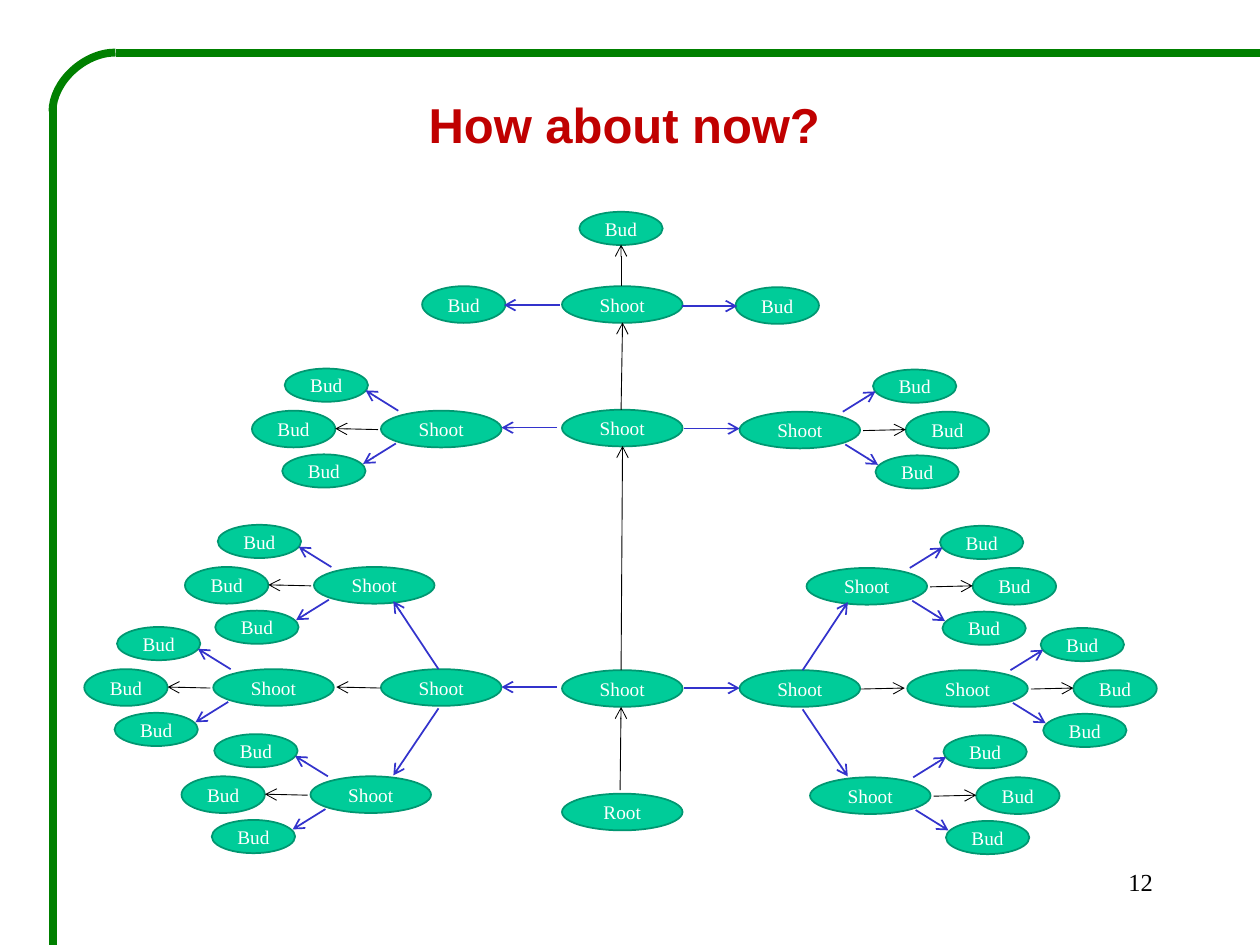
import pptx
import pptx.dml.color
import pptx.enum.shapes
import pptx.enum.text
import pptx.oxml
import pptx.oxml.ns
import pptx.util

Cm = pptx.util.Cm
Pt = pptx.util.Pt
Connector = pptx.enum.shapes.MSO_CONNECTOR
Align = pptx.enum.text.PP_ALIGN
Anchor = pptx.enum.text.MSO_ANCHOR

COLORS = {
    "title": "C00000",
    "node": "00CC99",
    "outline": "009771",
    "label": "FFFFFF",
    "stem": "000000",
    "branch": "3333CC",
    "frame": "008000",
}
ARROW_WIDTHS = {"stem": 0.5, "branch": 1}
MIRROR_SUM = 25.02
LEFT_RISE = 0.02
SHOOT = (2.43, 0.74)
BUD = (1.68, 0.74)
SMALL_BUD = (1.68, 0.67)
CENTER_LEFT = 11.33

CLUSTERS = [(14.91, 8.3), (16.26, 11.45), (18.29, 13.51), (16.33, 15.67)]
CLUSTER_BUDS = [(2.69, -0.85, SMALL_BUD), (3.35, 0, BUD), (2.74, 0.88, SMALL_BUD)]
CLUSTER_ARROWS = [
    ("branch", 2.08, 0, 2.74, -0.41),
    ("stem", 2.49, 0.38, 3.35, 0.36),
    ("branch", 2.13, 0.66, 2.79, 1.07),
]
SIDE_ARROWS = [
    ("branch", 13.74, 6.17, 14.86, 6.17),
    ("branch", 13.79, 8.64, 14.91, 8.64),
    ("branch", 13.79, 13.87, 14.91, 13.87),
    ("stem", 17.35, 13.89, 18.24, 13.87),
    ("branch", 16.18, 13.51, 17.09, 12.14),
    ("branch", 16.18, 14.3, 17.09, 15.65),
]
TRUNK_NODES = [("Shoot", 5.77), ("Shoot", 8.26), ("Shoot", 13.51), ("Root", 16)]
TRUNK_ARROWS = [
    (12.52, 5.77, 12.52, 4.93),
    (12.52, 8.26, 12.55, 6.5),
    (12.52, 13.51, 12.55, 8.99),
    (12.5, 15.93, 12.52, 14.25),
]


def color(name):
    return pptx.dml.color.RGBColor.from_string(COLORS[name])


def apply_format(target, values):
    for name, value in values.items():
        setattr(target, name, value)


def write_text(shape, text, frame_format, alignment, font_format, color_name):
    frame = shape.text_frame
    apply_format(frame, frame_format)
    paragraph = frame.paragraphs[0]
    paragraph.alignment = alignment
    run = paragraph.add_run()
    run.text = text
    apply_format(run.font, font_format)
    run.font.color.rgb = color(color_name)


def add_text(slide, box, *text_values):
    shape = slide.shapes.add_textbox(*map(Cm, box))
    write_text(shape, *text_values)


def add_node(slide, text, left, top, size):
    ellipse = pptx.enum.shapes.MSO_SHAPE.OVAL
    shape = slide.shapes.add_shape(ellipse, *map(Cm, (left, top, *size)))
    shape.shadow.inherit = False
    shape.fill.solid()
    shape.fill.fore_color.rgb = color("node")
    shape.line.color.rgb = color("outline")
    shape.line.width = Pt(1)
    margins = dict.fromkeys(
        ("margin_left", "margin_top", "margin_right", "margin_bottom"), 0)
    write_text(shape, text,
               {**margins, "word_wrap": False, "vertical_anchor": Anchor.MIDDLE},
               Align.CENTER, {"name": "Times New Roman", "size": Pt(11)}, "label")


def add_line(slide, color_name, width, points, kind=Connector.STRAIGHT):
    connector = slide.shapes.add_connector(kind, *map(Cm, points))
    connector.line.color.rgb = color(color_name)
    connector.line.width = Pt(width)
    properties = connector._element.spPr
    properties.append(pptx.oxml.parse_xml(
        "<a:effectLst %s/>" % pptx.oxml.ns.nsdecls("a")))
    return connector


def add_arrow(slide, kind, *points):
    connector = add_line(slide, kind, ARROW_WIDTHS[kind], points)
    connector.line._get_or_add_ln().append(pptx.oxml.parse_xml(
        '<a:tailEnd %s type="arrow"/>' % pptx.oxml.ns.nsdecls("a")))


def add_side(slide, mirrored):
    rise = LEFT_RISE if mirrored else 0

    def node(text, left, top, size):
        if mirrored:
            left = MIRROR_SUM - left - size[0]
        add_node(slide, text, left, top - rise, size)

    def arrow(kind, x1, y1, x2, y2):
        if mirrored:
            x1, x2 = MIRROR_SUM - x1, MIRROR_SUM - x2
        add_arrow(slide, kind, x1, y1 - rise, x2, y2 - rise)

    node("Bud", 14.83, 5.79, BUD)
    node("Shoot", 14.91, 13.51, SHOOT)
    for left, top in CLUSTERS:
        node("Shoot", left, top, SHOOT)
        for dx, dy, size in CLUSTER_BUDS:
            node("Bud", left + dx, top + dy, size)
        for kind, x1, y1, x2, y2 in CLUSTER_ARROWS:
            arrow(kind, left + x1, top + y1, left + x2, top + y2)
    for values in SIDE_ARROWS:
        arrow(*values)


def add_trunk(slide):
    add_node(slide, "Bud", 11.68, 4.27, SMALL_BUD)
    for text, top in TRUNK_NODES:
        add_node(slide, text, CENTER_LEFT, top, SHOOT)
    for points in TRUNK_ARROWS:
        add_arrow(slide, "stem", *points)


def add_frame(slide):
    add_line(slide, "frame", 4.5, (25.4, 1.06, 2.33, 1.06))
    add_line(slide, "frame", 4.5, (1.06, 2.12, 1.06, 19.05))
    corner = add_line(slide, "frame", 4.5, (2.33, 1.06, 1.06, 2.25), Connector.CURVE)
    corner._element.xpath(".//a:prstGeom")[0].set("prst", "curvedConnector2")


def main():
    presentation = pptx.Presentation()
    apply_format(presentation, {"slide_width": Cm(25.4), "slide_height": Cm(19.05)})
    slide = presentation.slides.add_slide(presentation.slide_layouts[6])
    add_frame(slide)
    add_text(slide, (7.49, 0.91, 10.19, 3.18), "How about now?",
             {"word_wrap": True, "vertical_anchor": Anchor.MIDDLE}, Align.CENTER,
             {"name": "Arial", "size": Pt(28), "bold": True}, "title")
    add_trunk(slide)
    for mirrored in (False, True):
        add_side(slide, mirrored)
    add_text(slide, (18.21, 17.35, 5.28, 1.27), "12", {"word_wrap": True},
             Align.RIGHT, {"name": "Times New Roman", "size": Pt(14)}, "stem")
    presentation.save("out.pptx")


if __name__ == "__main__":
    main()
